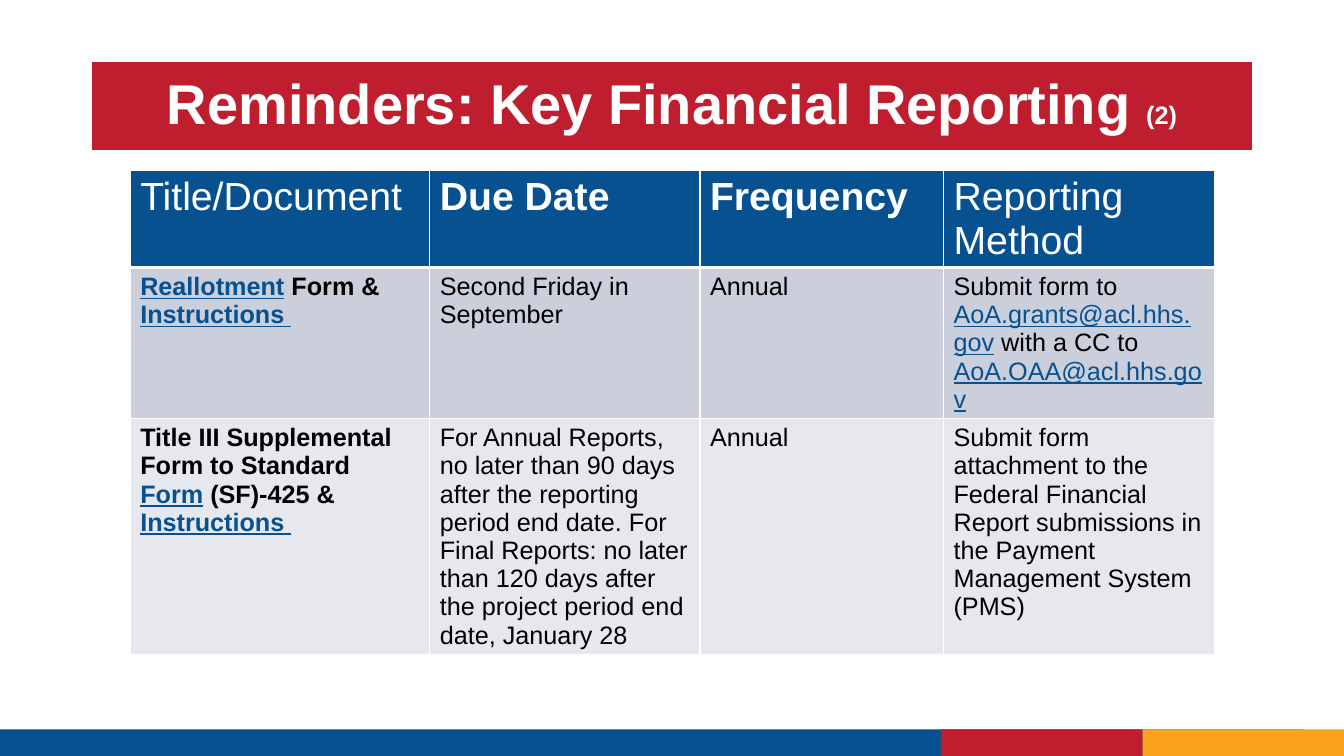
import pptx
import pptx.dml.color
import pptx.enum.shapes
import pptx.enum.text
import pptx.oxml
import pptx.oxml.ns
import pptx.util

Pt = pptx.util.Pt
BLUE, RED, GOLD = "075190", "BE1E2D", "F9A21A"
WHITE, BLACK = "FFFFFF", "000000"


def tint(item, shade):
    if hasattr(item, "solid"):
        item.solid()
        item = item.fore_color
    item.rgb = pptx.dml.color.RGBColor.from_string(shade)


def write(par, runs, shade, base):
    """Add runs to a paragraph; each is (text, format changes)."""
    for text, extra in runs:
        run = par.add_run()
        run.text = text
        look = {"name": "Arial", **base, **extra}
        for key, value in look.items():
            setattr(run.font, key, value)
        tint(run.font.color, BLUE if look.get("underline") else shade)


deck = pptx.Presentation()
deck.slide_width, deck.slide_height = Pt(960), Pt(540)
slide = deck.slides.add_slide(deck.slide_layouts[6])

# Footer bars and title banner
bars = [
    (0, 521, 931, 19.2, BLUE),
    (816, 521, 144, 19.2, GOLD),
    (672, 521, 144, 19.2, RED),
    (66, 44.5, 828, 62.5, RED),
]
for left, top, wide, high, shade in bars:
    bar = slide.shapes.add_shape(
        pptx.enum.shapes.MSO_SHAPE.RECTANGLE, Pt(left), Pt(top), Pt(wide), Pt(high))
    bar.shadow.inherit = False
    tint(bar.fill, shade)
    bar.line.fill.background()

# Title text, in the last bar
banner = bar
tint(banner.line.fill, RED)
banner.line.width = Pt(0.75)
frame = banner.text_frame
frame.word_wrap = True
frame.vertical_anchor = pptx.enum.text.MSO_ANCHOR.MIDDLE
title = frame.paragraphs[0]
title.alignment = pptx.enum.text.PP_ALIGN.CENTER
title.line_spacing = 0.9
write(title, [("Reminders: Key Financial Reporting ", {}), ("(2)", {"size": Pt(18)})],
      WHITE, {"size": Pt(40), "bold": True})

# Table content
link = {"underline": True}
bold = {"bold": True}
bold_link = {**bold, **link}
rows = [
    [
        [("Title/Document", {})],
        [("Due Date", bold)],
        [("Frequency", bold)],
        [("Reporting Method", {})],
    ],
    [
        [("Reallotment", bold_link), (" Form & ", bold), ("Instructions ", bold_link)],
        [("Second Friday in September", {})],
        [("Annual", {})],
        [("Submit form to ", {}), ("AoA.grants@acl.hhs.gov", link),
         (" with a CC to ", {}), ("AoA.OAA@acl.hhs.gov", link), (" ", {})],
    ],
    [
        [("Title III Supplemental Form to Standard ", bold), ("Form", bold_link),
         (" (SF)-425 & ", bold), ("Instructions ", bold_link)],
        [("For Annual Reports, no later than 90 days after the reporting period end date. "
          "For Final Reports: no later than 120 days after the project period end date, "
          "January 28", {})],
        [("Annual", {})],
        [("Submit form attachment to the Federal Financial Report submissions in "
          "the Payment Management System (PMS)", {})],
    ],
]
widths = [214, 193, 174, 193.5]
heights = [69.5, 108, 168.5]
fills = [BLUE, "CACFDB", "E6E8EE"]

# Table grid
grid = slide.shapes.add_table(
    len(rows), len(widths), Pt(93), Pt(121.5), Pt(sum(widths)), Pt(sum(heights))).table
grid.first_row = grid.horz_banding = False
for column, wide in zip(grid.columns, widths):
    column.width = Pt(wide)
for r, row in enumerate(rows):
    grid.rows[r].height = Pt(heights[r])
    shade, size = (WHITE, 28) if r == 0 else (BLACK, 18)
    # The rule under the header is thicker than the other borders
    rules = {"lnL": 1, "lnR": 1, "lnT": 3 if r == 1 else 1, "lnB": 3 if r == 0 else 1}
    for c, runs in enumerate(row):
        cell = grid.cell(r, c)
        tint(cell.fill, fills[r])
        write(cell.text_frame.paragraphs[0], runs, shade, {"size": Pt(size), "bold": False})
        props = cell._tc.get_or_add_tcPr()
        for spot, (tag, thick) in enumerate(rules.items()):
            props.insert(spot, pptx.oxml.parse_xml(
                f'<a:{tag} {pptx.oxml.ns.nsdecls("a")} w="{Pt(thick)}">'
                f'<a:solidFill><a:srgbClr val="{WHITE}"/></a:solidFill></a:{tag}>'))

deck.save("out.pptx")
